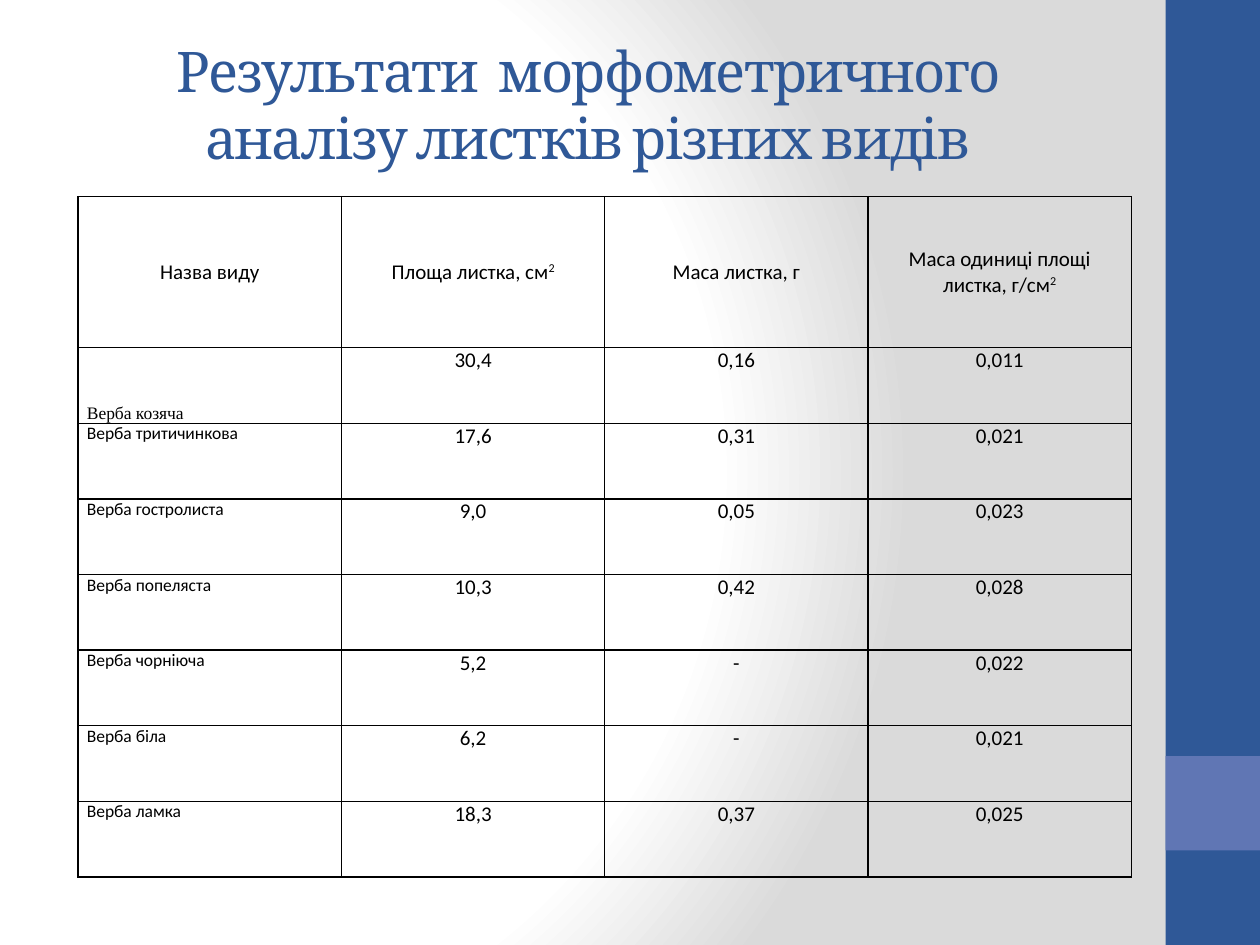
"""Build a slide with a table of leaf measurements for willow species."""
from lxml import etree
from pptx import Presentation
from pptx.dml.color import RGBColor
from pptx.enum import shapes, text
from pptx.oxml import parse_xml
from pptx.oxml.ns import qn
from pptx.util import Inches, Pt

COLORS = {"blue": "2F5897", "violet": "6076B4", "black": "000000",
          "white": "FFFFFF", "grey": "DADADA"}
HEADERS = [("Назва виду", ""), ("Площа листка, см", "2"), ("Маса листка, г", ""),
           ("Маса одиниці площі листка, г/см", "2")]
SPECIES = [
    ("Верба козяча", "30,4", "0,16", "0,011"),
    ("Верба тритичинкова", "17,6", "0,31", "0,021"),
    ("Верба гостролиста", "9,0", "0,05", "0,023"),
    ("Верба попеляста", "10,3", "0,42", "0,028"),
    ("Верба чорніюча", "5,2", "-", "0,022"),
    ("Верба біла", "6,2", "-", "0,021"),
    ("Верба ламка", "18,3", "0,37", "0,025"),
]


def set_font(p, name, size, color):
    p.font.name, p.font.size = name, Pt(size)
    p.font.color.rgb = RGBColor.from_string(COLORS[color])


def format_cell(cell, anchor):
    cell.fill.background()
    cell.vertical_anchor = anchor
    cell.margin_left = cell.margin_right = Inches(0.07)
    cell.margin_top = cell.margin_bottom = 0
    tcPr = cell._tc.get_or_add_tcPr()
    for i, side in enumerate(("lnL", "lnR", "lnT", "lnB")):
        ln = etree.Element(qn(f"a:{side}"), w=str(Pt(1)))
        fill = etree.SubElement(ln, qn("a:solidFill"))
        etree.SubElement(fill, qn("a:srgbClr"), val=COLORS["black"])
        tcPr.insert(i, ln)


prs = Presentation()
prs.slide_width, prs.slide_height = Inches(10), Inches(7.5)
W, H = prs.slide_width, prs.slide_height
s = prs.slides.add_slide(prs.slide_layouts[5])

stops = "".join(
    f'<a:gs pos="{pos}000"><a:srgbClr val="{COLORS[color]}"/></a:gs>'
    for pos, color in ((0, "white"), (75, "white"), (100, "grey")))
bgPr = s.element.cSld.get_or_add_bgPr()
bgPr[0] = parse_xml(
    '<a:gradFill xmlns:a="http://schemas.openxmlformats.org/drawingml/2006/main"'
    f' rotWithShape="1"><a:gsLst>{stops}</a:gsLst><a:path path="circle">'
    '<a:fillToRect l="20000" t="50000" r="100000" b="50000"/></a:path></a:gradFill>')

bar = 0.075
for top, height, color in ((0, 1, "blue"), (0.8, 0.1, "violet")):
    sp = s.shapes.add_shape(shapes.MSO_SHAPE.RECTANGLE, int(W * (1 - bar)),
                            int(H * top), int(W * bar), int(H * height))
    sp.shadow.inherit = False
    sp.fill.solid()
    sp.fill.fore_color.rgb = RGBColor.from_string(COLORS[color])
    sp.line.fill.background()

title = s.shapes.title
title.left, title.top = int(W * 0.05), int(H * 0.04)
title.width, title.height = Inches(8.33), Inches(1.25)
tf = title.text_frame
tf.word_wrap = True
tf.auto_size = text.MSO_AUTO_SIZE.NONE
tf.vertical_anchor = text.MSO_ANCHOR.MIDDLE
tf.margin_bottom = Inches(0.25)
p = tf.paragraphs[0]
p.alignment = text.PP_ALIGN.CENTER
set_font(p, "Cambria", 32, "blue")
r = p.add_run()
r.text = "Результати  морфометричного аналізу листків різних видів"
r._r.get_or_add_rPr().set("spc", "-100")

row_height = Inches(0.6)
table = s.shapes.add_table(len(SPECIES) + 1, len(HEADERS), Inches(0.62), Inches(1.56),
                           Inches(8.36), row_height * (len(SPECIES) + 2)).table
table.first_row = table.horz_banding = False
for row in table.rows:
    row.height = row_height
table.rows[0].height = 2 * row_height

for col, (label, power) in enumerate(HEADERS):
    cell = table.cell(0, col)
    format_cell(cell, text.MSO_ANCHOR.MIDDLE)
    p = cell.text_frame.paragraphs[0]
    p.alignment = text.PP_ALIGN.CENTER
    set_font(p, "Calibri", 12, "black")
    p.add_run().text = label
    if power:
        r = p.add_run()
        r.text = power
        r._r.get_or_add_rPr().set("baseline", "30000")

for row, values in enumerate(SPECIES, 1):
    for col, value in enumerate(values):
        cell = table.cell(row, col)
        format_cell(cell, text.MSO_ANCHOR.TOP)
        p = cell.text_frame.paragraphs[0]
        p.add_run().text = value
        p.alignment = text.PP_ALIGN.CENTER if col else text.PP_ALIGN.JUSTIFY
        set_font(p, "Calibri", 12 if col else 10, "black")

first = table.cell(1, 0)
first.vertical_anchor = text.MSO_ANCHOR.BOTTOM
p = first.text_frame.paragraphs[0]
p.alignment = text.PP_ALIGN.LEFT
p.line_spacing = 1.15
p.font.name = "Times New Roman"

prs.save("out.pptx")
